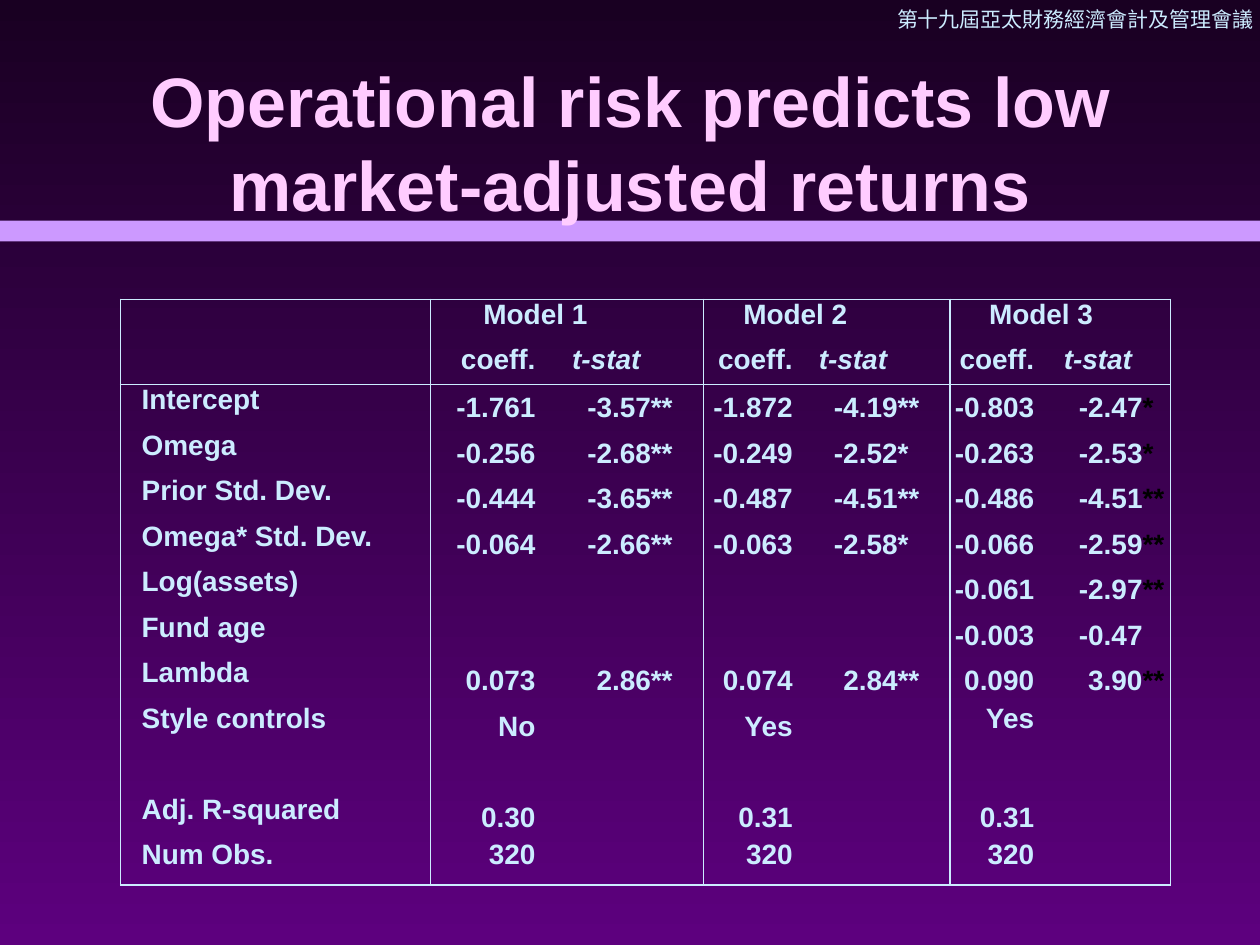
from lxml.etree import SubElement
from pptx import Presentation
from pptx.dml.color import RGBColor
from pptx.enum.shapes import MSO_SHAPE
from pptx.enum.text import MSO_ANCHOR, PP_ALIGN
from pptx.oxml.ns import qn
from pptx.util import Pt

NIGHT = RGBColor(0x19, 0x00, 0x22)
PURPLE = RGBColor(0x5D, 0x00, 0x7E)
LILAC = RGBColor(0xCC, 0x99, 0xFF)
PINK = RGBColor(0xFF, 0xCC, 0xFF)
ICE = RGBColor(0xCC, 0xEC, 0xFF)
BLACK = RGBColor(0x00, 0x00, 0x00)

COLUMN_WIDTHS = [12, 165, 66, 60, 30, 57, 54, 30, 54, 56, 16]
ROW_HEIGHT = 26
SUBHEAD_HEIGHT = 7
MODEL_COLUMNS = [2, 5, 8]
STAR_COLUMNS = [4, 7, 10]
RIGHT_EDGES = [1] + STAR_COLUMNS
LEFT_EDGES = [0] + MODEL_COLUMNS
REGRESSION = [
    ("Intercept", ["-1.761", "-3.57", "**", "-1.872", "-4.19", "**", "-0.803", "-2.47", "*"]),
    ("Omega", ["-0.256", "-2.68", "**", "-0.249", "-2.52", "*", "-0.263", "-2.53", "*"]),
    ("Prior Std. Dev.", ["-0.444", "-3.65", "**", "-0.487", "-4.51", "**", "-0.486", "-4.51", "**"]),
    ("Omega* Std. Dev.", ["-0.064", "-2.66", "**", "-0.063", "-2.58", "*", "-0.066", "-2.59", "**"]),
    ("Log(assets)", [""] * 6 + ["-0.061", "-2.97", "**"]),
    ("Fund age", [""] * 6 + ["-0.003", "-0.47", ""]),
    ("Lambda", ["0.073", "2.86", "**", "0.074", "2.84", "**", "0.090", "3.90", "**"]),
    ("Style controls", ["No", "", "", "Yes", "", "", "Yes", "", ""]),
    ("", [""] * 9),
    ("Adj. R-squared", ["0.30", "", "", "0.31", "", "", "0.31", "", ""]),
    ("Num Obs.", ["320", "", "", "320", "", "", "320", "", ""]),
]
LAST_ROW = len(REGRESSION) + 1


def style_text(paragraph, size, color, font="Arial", bold=True, italic=False):
    for run in paragraph.runs:
        run.font.size = Pt(size)
        run.font.name = font
        run.font.bold = bold
        run.font.italic = italic
        run.font.color.rgb = color


def add_backdrop(slide, left, top, width, height):
    backdrop = slide.background.fill
    backdrop.gradient()
    backdrop.gradient_angle = 270
    for stop, color in zip(backdrop.gradient_stops, (NIGHT, PURPLE)):
        stop.color.rgb = color
    band = slide.shapes.add_shape(
        MSO_SHAPE.RECTANGLE, Pt(left), Pt(top), Pt(width), Pt(height))
    band.shadow.inherit = False
    band.fill.solid()
    band.fill.fore_color.rgb = LILAC
    band.line.fill.background()


def add_conference_name(slide, left, top, width, height):
    conference = slide.shapes.add_textbox(Pt(left), Pt(top), Pt(width), Pt(height))
    frame = conference.text_frame
    frame.word_wrap = True
    frame.margin_right = 0
    frame.text = "第十九屆亞太財務經濟會計及管理會議"
    style_text(frame.paragraphs[0], 12, ICE, "Times New Roman", False)


def add_title(slide, left, top, width, height):
    title = slide.shapes.add_textbox(Pt(left), Pt(top), Pt(width), Pt(height))
    frame = title.text_frame
    frame.word_wrap = True
    frame.vertical_anchor = MSO_ANCHOR.MIDDLE
    frame.text = "Operational risk predicts low market-adjusted returns"
    frame.paragraphs[0].alignment = PP_ALIGN.CENTER
    style_text(frame.paragraphs[0], 40, PINK)


def set_borders(cell, row, column):
    visible = {
        "a:lnL": column in LEFT_EDGES,
        "a:lnR": column in RIGHT_EDGES,
        "a:lnT": row in (0, 2),
        "a:lnB": row in (1, LAST_ROW),
    }
    properties = cell._tc.get_or_add_tcPr()
    for side, shown in visible.items():
        border = SubElement(properties, qn(side), w=str(Pt(1)))
        if shown:
            ink = SubElement(border, qn("a:solidFill"))
            SubElement(ink, qn("a:srgbClr"), val=str(ICE))
        else:
            SubElement(border, qn("a:noFill"))
    cell.fill.background()


def write_cell(cell, text, alignment, anchor=MSO_ANCHOR.TOP, right=6, color=ICE, italic=False):
    if not text:
        return
    cell.margin_right = Pt(right)
    cell.margin_bottom = Pt(3.6)
    cell.vertical_anchor = anchor
    cell.text_frame.text = text
    paragraph = cell.text_frame.paragraphs[0]
    paragraph.alignment = alignment
    style_text(paragraph, 16, color, italic=italic)


def write_headings(table):
    for model, column in enumerate(MODEL_COLUMNS, 1):
        heading = table.cell(0, column)
        heading.merge(table.cell(0, column + 1))
        write_cell(heading, f"Model {model}", PP_ALIGN.CENTER)
        write_cell(table.cell(1, column), "coeff.", PP_ALIGN.RIGHT)
        write_cell(table.cell(1, column + 1), "t-stat", PP_ALIGN.RIGHT, italic=True)


def write_results(table):
    for row, (variable, values) in enumerate(REGRESSION, 2):
        write_cell(table.cell(row, 1), variable, PP_ALIGN.LEFT, right=0)
        for column, value in enumerate(values, 2):
            at_top = row == LAST_ROW or (variable == "Style controls" and column == 8)
            write_cell(
                table.cell(row, column), value,
                PP_ALIGN.LEFT if column in STAR_COLUMNS else PP_ALIGN.RIGHT,
                MSO_ANCHOR.TOP if at_top else MSO_ANCHOR.BOTTOM,
                6 if column in MODEL_COLUMNS else 0,
                BLACK if column == STAR_COLUMNS[-1] else ICE)


def add_regression_table(slide, left, top, width, height):
    table = slide.shapes.add_table(
        LAST_ROW + 1, len(COLUMN_WIDTHS), Pt(left), Pt(top), Pt(width), Pt(height)).table
    table.first_row = False
    table.horz_banding = False
    for column, column_width in zip(table.columns, COLUMN_WIDTHS):
        column.width = Pt(column_width)
    for index, row in enumerate(table.rows):
        row.height = Pt(SUBHEAD_HEIGHT if index == 1 else ROW_HEIGHT)
        for column, cell in enumerate(row.cells):
            cell.margin_left = cell.margin_right = 0
            cell.margin_top = cell.margin_bottom = 0
            set_borders(cell, index, column)
    write_headings(table)
    write_results(table)


def main():
    presentation = Presentation()
    presentation.slide_width = Pt(720)
    presentation.slide_height = Pt(540)
    slide = presentation.slides.add_slide(presentation.slide_layouts[6])
    add_backdrop(slide, 0, 126, 720, 12)
    add_conference_name(slide, 505.5, 0, 214.5, 21.6)
    add_title(slide, 54, 36, 612, 90)
    add_regression_table(slide, 69, 171, 600, 335)
    presentation.save("out.pptx")


if __name__ == "__main__":
    main()
